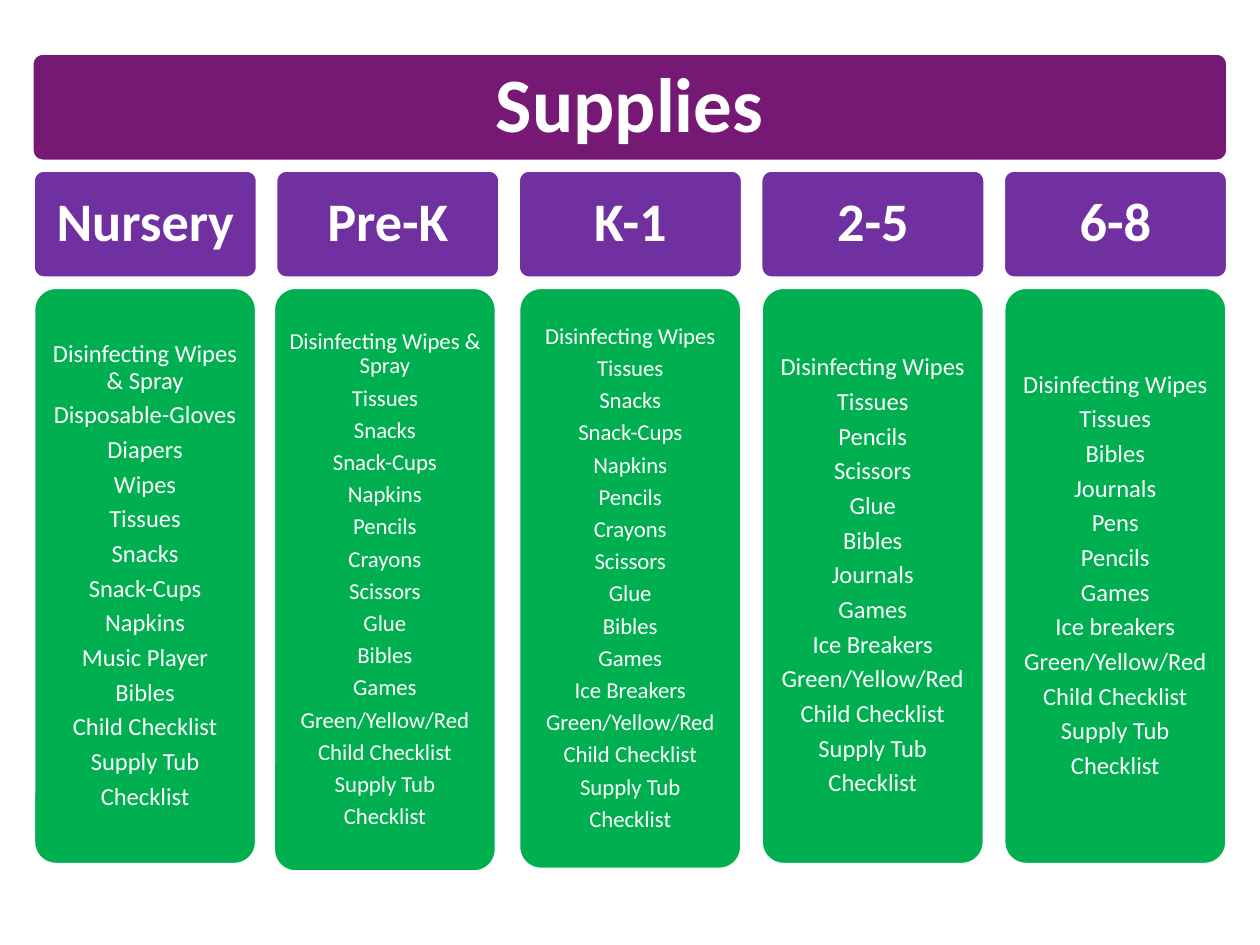
from lxml.etree import SubElement
from pptx import Presentation
from pptx.dml.color import RGBColor
from pptx.enum.shapes import MSO_SHAPE
from pptx.enum.text import MSO_ANCHOR, MSO_AUTO_SIZE, PP_ALIGN
from pptx.oxml.ns import qn
from pptx.util import Pt

COLORS = {"banner": "660066", "heading": "7030A0", "card": "00B050", "white": "FFFFFF"}
FONT = "Calibri"

LEFT, PITCH = 18.9, 138.6
BANNER = (18.2, 30.4, 683.4, 61.8)
HEADING_TOP, HEADING_WIDTH, HEADING_HEIGHT = 97.2, 128.2, 61.8
CARD_TOP, CARD_WIDTH = 164.2, 127.5

ENDING = ["Green/Yellow/Red", "Child Checklist", "Supply Tub", "Checklist"]
CRAFTS = ["Tissues", "Snacks", "Snack-Cups", "Napkins", "Pencils", "Crayons",
          "Scissors", "Glue", "Bibles", "Games"]

GROUPS = [
    ("Nursery", 0.3, 329.8, 14, 4.4,
     ["Disinfecting Wipes & Spray", "Disposable-Gloves", "Diapers", "Wipes", "Tissues",
      "Snacks", "Snack-Cups", "Napkins", "Music Player", "Bibles"] + ENDING[1:]),
    ("Pre-K", -1.3, 334.1, 13, 3.6,
     ["Disinfecting Wipes & Spray"] + CRAFTS + ENDING),
    ("K-1", 0.3, 332.6, 13, 3.6,
     ["Disinfecting Wipes"] + CRAFTS + ["Ice Breakers"] + ENDING),
    ("2-5", 0.3, 329.8, 14, 4.4,
     ["Disinfecting Wipes", "Tissues", "Pencils", "Scissors", "Glue", "Bibles",
      "Journals", "Games", "Ice Breakers"] + ENDING),
    ("6-8", 0.3, 329.8, 14, 4.4,
     ["Disinfecting Wipes", "Tissues", "Bibles", "Journals", "Pens", "Pencils",
      "Games", "Ice breakers"] + ENDING),
]


class SupplyPage:
    """Holds the style and the current slide, and draws its elements."""

    def __init__(self, deck):
        self.page = deck.slides.add_slide(deck.slide_layouts[5])

    def panel(self, area, color, opacity=100):
        box = self.page.shapes.add_shape(MSO_SHAPE.ROUNDED_RECTANGLE, *map(Pt, area))
        box.adjustments[0] = 0.1
        box.shadow.inherit = False
        box.fill.solid()
        box.fill.fore_color.rgb = RGBColor.from_string(COLORS[color])
        box.line.color.rgb = RGBColor.from_string(COLORS["white"])
        box.line.width = Pt(2)
        if opacity < 100:
            tint = box._element.spPr.find(qn("a:solidFill"))[0]
            SubElement(tint, qn("a:alpha"), val=str(opacity * 1000))
        return box

    def set_text(self, box, lines, size, inset, bold=False):
        frame = box.text_frame
        frame.word_wrap = True
        frame.auto_size = MSO_AUTO_SIZE.NONE
        frame.vertical_anchor = MSO_ANCHOR.MIDDLE
        frame.margin_left = frame.margin_right = Pt(inset)
        frame.margin_top = frame.margin_bottom = Pt(inset)
        frame.text = "\n".join(lines)
        for para in frame.paragraphs:
            para.alignment = PP_ALIGN.CENTER
            para.line_spacing = 0.9
            para.space_before = Pt(0)
            para.space_after = Pt(round(size / 3, 2))
            para.font.name = FONT
            para.font.size = Pt(size)
            para.font.bold = bold
            para.font.color.rgb = RGBColor.from_string(COLORS["white"])

    def title(self, text):
        banner = self.panel(BANNER, "banner", opacity=90)
        title = self.page.shapes.title
        title.left, title.top, title.width, title.height = map(Pt, BANNER)
        banner._element.addnext(title._element)
        self.set_text(title, [text], 44, 13, bold=True)

    def heading(self, left, text):
        box = self.panel((left, HEADING_TOP, HEADING_WIDTH, HEADING_HEIGHT), "heading")
        self.set_text(box, [text], 31, 9.4, bold=True)

    def card(self, left, height, size, inset, supplies):
        box = self.panel((left, CARD_TOP, CARD_WIDTH, height), "card")
        self.set_text(box, supplies, size, inset)


def main():
    deck = Presentation()
    deck.slide_width, deck.slide_height = Pt(720), Pt(540)
    page = SupplyPage(deck)
    page.title("Supplies")
    for index, (name, shift, height, size, inset, supplies) in enumerate(GROUPS):
        left = LEFT + index * PITCH
        page.heading(left, name)
        page.card(left + shift, height, size, inset, supplies)
    deck.save("out.pptx")


if __name__ == "__main__":
    main()
